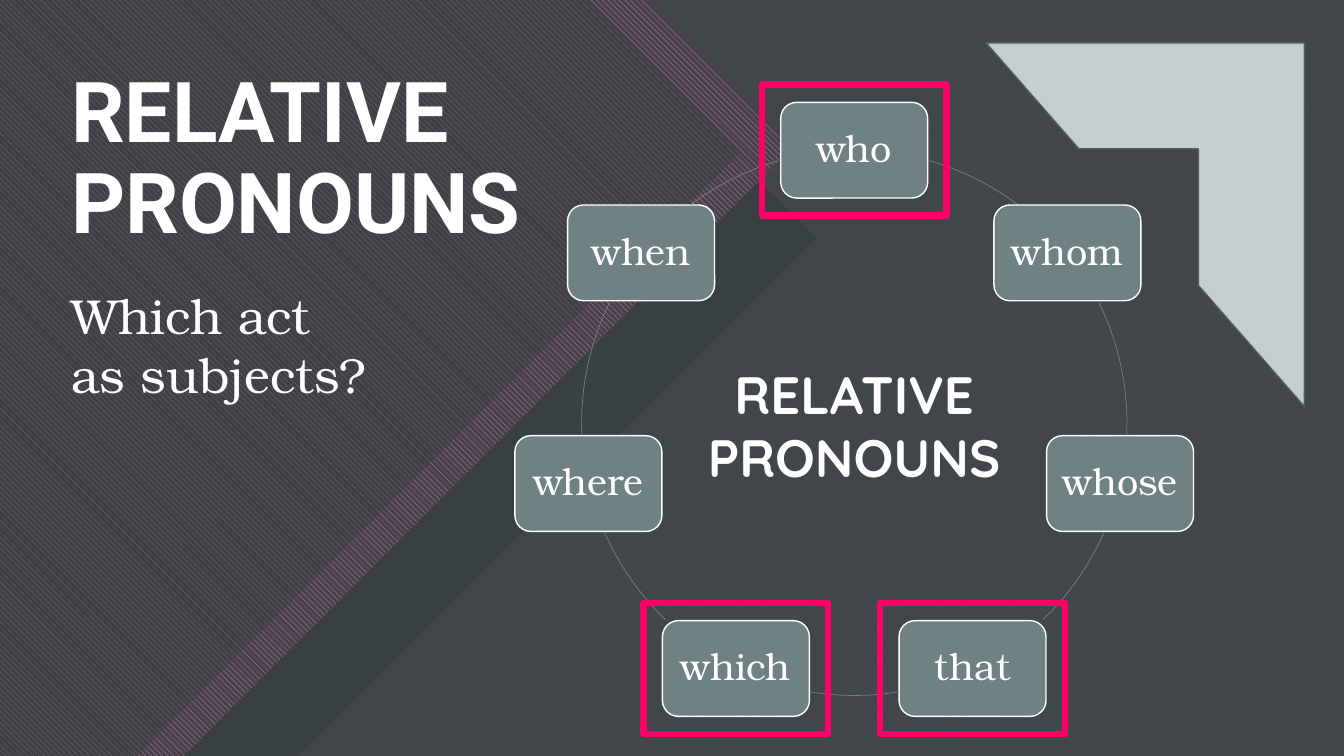
from math import cos, radians, sin

from lxml.etree import SubElement
from pptx import Presentation
from pptx.dml.color import RGBColor
from pptx.enum.dml import MSO_PATTERN as Pat
from pptx.enum.shapes import MSO_SHAPE as Geo
from pptx.enum.text import MSO_ANCHOR as Anchor, PP_ALIGN as Align
from pptx.oxml.ns import qn
from pptx.util import Emu, Pt

COLS, ROWS = 160, 90
CELL = 76200
WHITE, SLATE, DARK = "FFFFFF", "6F8183", "384042"
MAUVE, PLUM, MIST, PINK = "967E96", "4C3E4C", "A8B4B5", "FF0066"
SERIF = "TeX Gyre Bonum"

MID_X, MID_Y, RADIUS = 101.7, 50.34, 32.46
NODE, FRAME = (17.5, 11.4), (22, 15.6)
# Each word, then the clockwise angles from the top where the next arc runs
RING = [
    ("who", 16, 36.9),
    ("whom", 63.8, 92.4),
    ("whose", 113.6, 136.2),
    ("that", 170.5, 189.5),
    ("which", 223.8, 246.4),
    ("where", 267.6, 296.2),
    ("when", 323.1, 344),
]
SUBJECTS = ("who", "that", "which")


def rgb(code):
    return RGBColor.from_string(code)


def cells(*nums):
    return [Emu(round(n * CELL)) for n in nums]


def apply(target, **values):
    for name, value in values.items():
        setattr(target, name, value)


class Deck:
    """Holds the presentation, its slide and the shared style, on a grid of square cells."""

    def __init__(self):
        self.prs = Presentation()
        apply(self.prs, slide_width=Emu(COLS * CELL), slide_height=Emu(ROWS * CELL))
        self.slide = self.prs.slides.add_slide(self.prs.slide_layouts[6])
        self.shapes = self.slide.shapes

    def paint(self, shape, fill=None, line=None, width=1, alpha=None, pattern=None):
        """Fill is one colour, or a fore and back pair when a pattern is given."""
        shape.shadow.inherit = False
        if pattern:
            shape.fill.patterned()
            shape.fill.pattern = pattern
            shape.fill.fore_color.rgb, shape.fill.back_color.rgb = map(rgb, fill)
        elif fill:
            shape.fill.solid()
            shape.fill.fore_color.rgb = rgb(fill)
        else:
            shape.fill.background()
        if alpha:
            tint = shape._element.spPr.find(qn("a:solidFill"))[0]
            SubElement(tint, qn("a:alpha"), val=str(alpha * 1000))
        if line:
            shape.line.color.rgb = rgb(line)
            shape.line.width = Pt(width)
        else:
            shape.line.fill.background()
        return shape

    def form(self, geo, box, **look):
        return self.paint(self.shapes.add_shape(geo, *cells(*box)), **look)

    def panel(self, tip, top=0, **look):
        """Left-hand panel whose two 45 degree edges meet at the tip."""
        x, y = tip
        points = [(0, top), (x - y + top, top), tip, (x - ROWS + y, ROWS), (0, ROWS)]
        first, *rest = [cells(*p) for p in points]
        outline = self.shapes.build_freeform(*first)
        outline.add_line_segments(rest, close=True)
        return self.paint(outline.convert_to_shape(), **look)

    def letter(self, shape, text, size, font, bold=False, align=Align.LEFT,
               anchor=Anchor.MIDDLE, space=1.0):
        """Put styled text into a shape."""
        apply(shape.text_frame, word_wrap=True, vertical_anchor=anchor)
        para = shape.text_frame.paragraphs[0]
        apply(para, text=text, alignment=align, line_spacing=space)
        apply(para.font, size=Pt(size), name=font, bold=bold)
        para.font.color.rgb = rgb(WHITE)

    def label(self, box, text, size, font, **style):
        self.letter(self.shapes.add_textbox(*cells(*box)), text, size, font, **style)

    def arc(self, start, end):
        box = (MID_X - RADIUS, MID_Y - RADIUS, 2 * RADIUS, 2 * RADIUS)
        curve = self.form(Geo.ARC, box, line=SLATE, width=0.5)
        for i, turn in enumerate((start, end)):
            curve.adjustments[i] = (turn + 270) % 360 * 0.6


def spot(index, size):
    """Box of the given size centred on a place of the ring."""
    turn = radians(index * 360 / len(RING))
    wide, high = size
    x, y = MID_X + RADIUS * sin(turn), MID_Y - RADIUS * cos(turn)
    return x - wide / 2, y - high / 2, wide, high


def main():
    deck = Deck()
    down = Pat.WIDE_DOWNWARD_DIAGONAL
    full = (0, 0, COLS, ROWS)
    deck.form(Geo.RECTANGLE, full, fill=(SLATE, MAUVE), pattern=down)
    deck.form(Geo.RECTANGLE, full, fill=DARK, alpha=90)
    deck.panel((97.2, 28.3), top=10.8, fill=DARK)
    deck.panel((94.4, 17.5), fill=(MIST, PLUM), pattern=down)
    deck.panel((88.2, 18.1), fill=DARK, alpha=51)

    deck.label((7.3, 8.6, 64.9, 21.1), "RELATIVE PRONOUNS", 60, "Roboto",
               bold=True, space=0.9)
    corner = deck.form(Geo.HALF_FRAME, (117.4, 5.1, 37.9, 43.3), fill="C5CDCE", line="525F61")
    corner._element.spPr.find(qn("a:xfrm")).set("flipH", "1")
    deck.label((7.3, 33.4, 38.4, 15.4), "Which act as subjects?", 35, SERIF, anchor=Anchor.TOP)

    for i, (word, start, end) in enumerate(RING):
        node = deck.form(Geo.ROUNDED_RECTANGLE, spot(i, NODE), fill=SLATE, line=WHITE)
        apply(node.text_frame, margin_left=0, margin_right=0)
        deck.letter(node, word, 27, SERIF, align=Align.CENTER, space=0.9)
        deck.arc(start, end)
    deck.label((82.6, 41.9, 38.2, 17.3), "RELATIVE PRONOUNS", 37.5, "Quicksand",
               bold=True, align=Align.CENTER, space=Pt(45.6))

    for i, (word, *_) in enumerate(RING):
        if word in SUBJECTS:
            deck.form(Geo.RECTANGLE, spot(i, FRAME), line=PINK, width=4.5)
    deck.prs.save("out.pptx")


if __name__ == "__main__":
    main()
